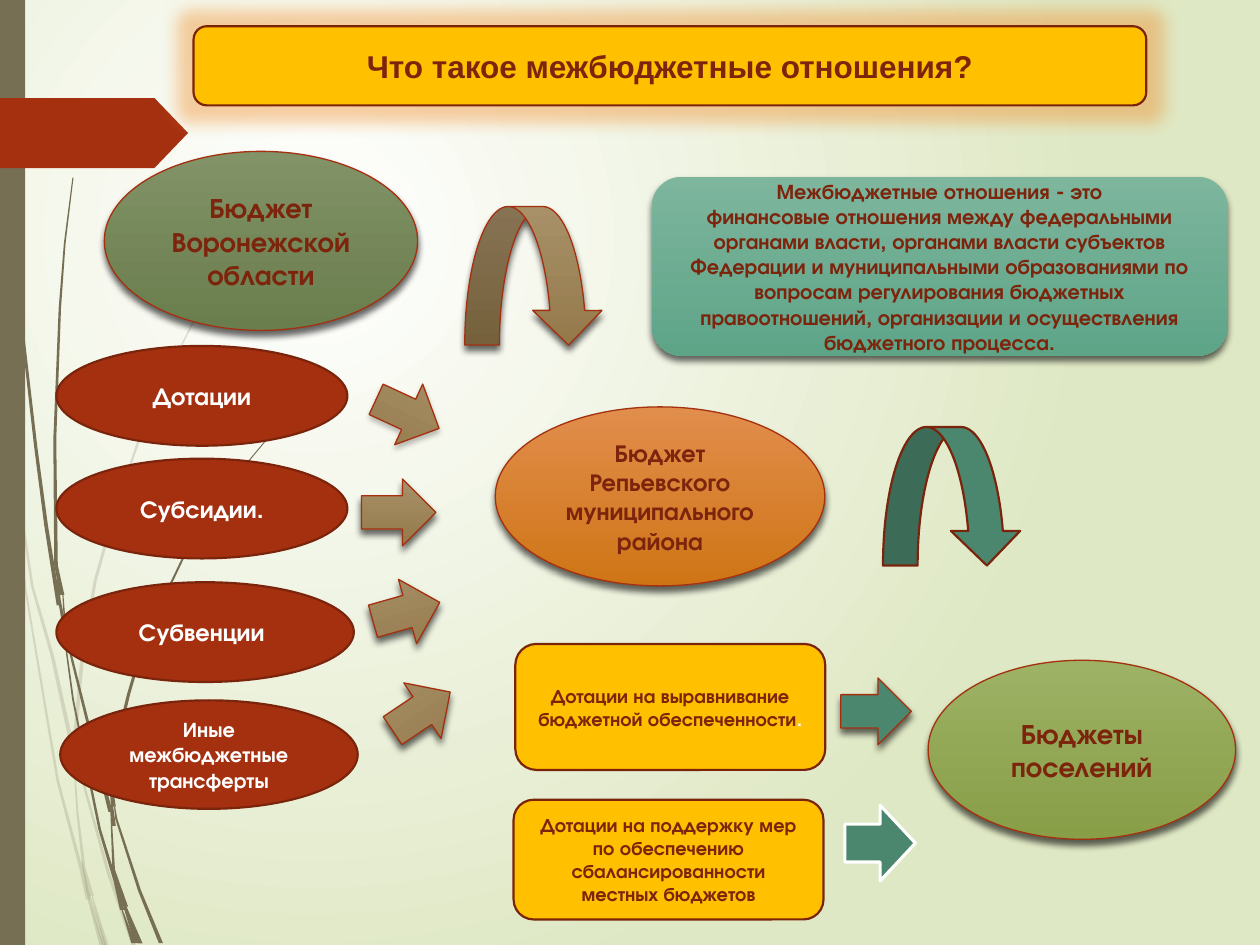
from dataclasses import dataclass
from typing import NamedTuple
from lxml import etree
from pptx import Presentation
from pptx.dml.color import RGBColor
from pptx.enum import shapes, text
from pptx.oxml import ns
from pptx.util import Pt

KIND = shapes.MSO_SHAPE


@dataclass(frozen=True)
class Theme:
    title_font: str = "Arial"
    body_font: str = "TeX Gyre Adventor"
    title: int = 18
    large: int = 16
    medium: int = 14
    small: int = 12
    tiny: int = 11
    dark: str = "7A240C"
    ink: str = "7C240C"
    white: str = "FFFFFF"
    rust: str = "A53010"
    gold: str = "FFC000"
    teal: str = "4B866E"
    stalk: str = "766F54"
    glow: str = "F08A24"
    page: tuple = ("FFFFFF", "DFE8C4")
    olive: tuple = ("819367", "6A7D4D")
    orange: tuple = ("E18D4C", "CF7516")
    green: tuple = ("9DB265", "889E47")
    mint: tuple = ("7DB59D", "5EA588")
    tan: tuple = ("A89068", "947A4B")


THEME = Theme()
PALE_STALKS = [
    [(0, 209), (2.7, 227), (5.4, 252)],
    [(7.2, 248), (8.5, 268), (18.5, 335), (30, 375), (42.2, 431)],
    [(44, 430), (45, 438), (62, 499), (76.3, 540)],
    [(52.6, 512), (60.8, 540)],
    [(5.8, 252), (14.8, 338), (33, 446), (46, 495), (50.4, 514)],
    [(42, 432), (44.3, 465), (48, 496), (52.5, 512)],
    [(156, 110), (134.5, 142), (114.5, 176), (96, 213), (79.5, 251), (66, 291),
     (54.4, 332), (47, 376), (43, 420), (43.4, 429)],
    [(50.4, 514), (58, 540)],
    [(42.8, 422), (43, 439)],
    [(46.8, 492), (50, 509), (59.5, 540)]]
DARK_STALKS = [
    [(1.8, 0), (2.5, 35), (4, 79), (10.4, 168), (20.5, 256), (26.3, 300), (33.6, 346)],
    [(36, 340), (37.5, 362), (53.5, 426), (63.2, 464)],
    [(65.5, 461), (66.5, 468), (79.8, 509), (92, 539)],
    [(34, 343), (41.8, 400), (57, 474), (66, 504), (69.8, 520)],
    [(41.7, 101.5), (37, 139), (34.2, 176), (31.3, 251), (32, 323), (35.6, 340)],
    [(72, 518), (80.3, 539)],
    [(32.4, 323), (34, 343), (38, 364)],
    [(155, 248), (137.5, 269), (121, 292), (106, 316), (93.6, 342), (81.6, 369),
     (73.4, 397), (66.5, 426), (64.2, 455), (65, 461)],
    [(69.8, 520), (76.3, 539)],
    [(63.4, 464), (65, 497), (72, 518)],
    [(63.4, 454), (65, 472)],
    [(65.5, 498), (68.5, 509), (78, 539)]]


class Box(NamedTuple):
    left: float
    top: float
    width: float
    height: float

    def inner(self, left, top, width, height):
        return Box(self.left + left, self.top + top, width, height)


def add_child(parent, tag, **attributes):
    values = {name: str(value) for name, value in attributes.items()}
    return etree.SubElement(parent, ns.qn(tag), values)


def add_effect(shape, tag, color, alpha, **attributes):
    effects = shape._element.spPr.find(ns.qn("a:effectLst"))
    node = add_child(add_child(effects, tag, **attributes), "a:srgbClr", val=color)
    add_child(node, "a:alpha", val=alpha * 1000)


def paint(fill, color):
    """Fill with one colour, or top to bottom with a pair of colours."""
    if isinstance(color, str):
        fill.solid()
        fill.fore_color.rgb = RGBColor.from_string(color)
        return
    fill.gradient()
    fill.gradient_angle = 270
    for position, (stop, shade) in enumerate(zip(fill.gradient_stops, color)):
        stop.position, stop.color.rgb = position, RGBColor.from_string(shade)


def dress(shape, fill, line=None, weight=1.25):
    shape.shadow.inherit = False
    paint(shape.fill, fill)
    shape.line.fill.background()
    if line:
        paint(shape.line.fill, line)
        shape.line.width = Pt(weight)
    return shape


def add_flat(page, kind, box, fill, line=THEME.dark, weight=1.25):
    return dress(page.shapes.add_shape(kind, *map(Pt, box)), fill, line, weight)


def add_raised(page, kind, box, fill, line=THEME.rust, shadow=(60, 4, 3)):
    shape = add_flat(page, kind, box, fill, line, 0.75)
    alpha, blur, distance = shadow
    add_effect(shape, "a:outerShdw", "000000", alpha, blurRad=Pt(blur),
               dist=Pt(distance), dir=5400000, algn="ctr", rotWithShape=0)
    return shape


def write(shape, words, size, color=THEME.ink, font=THEME.body_font):
    frame = shape.text_frame
    frame.word_wrap, frame.vertical_anchor = True, text.MSO_ANCHOR.MIDDLE
    para = frame.paragraphs[0]
    para.text, para.alignment = words, text.PP_ALIGN.CENTER
    para.font.size, para.font.bold = Pt(size), True
    add_span_style(para.runs[0], size, color, font)
    return para


def add_span_style(span, size, color, font=THEME.body_font):
    span.font.size, span.font.name, span.font.bold = Pt(size), font, True
    span.font.color.rgb = RGBColor.from_string(color)


def draw_stalk(page, box, points, alpha):
    """Grass blade that widens from its first point to its last."""
    half = [0.3 + 0.9 * index / (len(points) - 1) for index in range(len(points))]
    near, far = ([(Pt(box.left + x + side * w), Pt(box.top + y))
                  for (x, y), w in zip(points, half)] for side in (-1, 1))
    builder = page.shapes.build_freeform(*near[0], scale=1.0)
    builder.add_line_segments(near[1:] + far[::-1], close=True)
    shape = dress(builder.convert_to_shape(), THEME.stalk)
    color = shape._element.spPr.find(ns.qn("a:solidFill"))[0]
    add_child(color, "a:alpha", val=alpha * 1000)


def draw_backdrop(page, box):
    paint(page.background.fill, THEME.page)
    linear = page.element.find(".//" + ns.qn("a:lin"))
    circle = etree.Element(ns.qn("a:path"), path="circle")
    add_child(circle, "a:fillToRect", l=50000, t=50000, r=100000, b=100000)
    linear.getparent().replace(linear, circle)
    for alpha, stalks in ((20, PALE_STALKS), (100, DARK_STALKS)):
        for points in stalks:
            draw_stalk(page, box, points, alpha)
    add_flat(page, KIND.RECTANGLE, box.inner(0, 0, 14.4, box.height), THEME.stalk, None)
    tag = add_flat(page, KIND.PENTAGON, box.inner(0, 56, 107.5, 40), THEME.rust, None)
    tag.adjustments[0] = 0.48


def draw_banner(page, box):
    banner = add_flat(page, KIND.ROUNDED_RECTANGLE, box, THEME.gold)
    add_effect(banner, "a:glow", THEME.glow, 40, rad=Pt(18))
    write(banner, "Что такое межбюджетные отношения?", THEME.title, font=THEME.title_font)


def draw_definition(page, box):
    bound = chr(160).join(["финансовые", "отношения", "между"])
    write(add_raised(page, KIND.ROUNDED_RECTANGLE, box, THEME.mint, None),
          f"Межбюджетные отношения - это {bound} федеральными органами власти, органами "
          "власти субъектов Федерации и муниципальными образованиями по вопросам "
          "регулирования бюджетных правоотношений, организации и осуществления "
          "бюджетного процесса.", THEME.small)


def draw_transfers(page, box):
    ovals = [("Дотации", THEME.medium, (0, 0, 166.3, 57)),
             ("Субсидии.", THEME.medium, (0, 64.4, 166.3, 57)),
             ("Субвенции ", THEME.medium, (0, 135, 170, 57)),
             ("Иные межбюджетные трансферты", THEME.small, (2.2, 202.5, 170, 62))]
    for words, size, place in ovals:
        write(add_flat(page, KIND.OVAL, box.inner(*place), THEME.rust),
              words, size, THEME.white)
    for left, top, width, turn, shadow in [
            (180.9, 19.7, 39.6, 24.8, (25, 3, 2)), (174.4, 76, 42.5, 0, (60, 4, 3)),
            (180.2, 132.8, 39.6, 344.2, (60, 4, 3)), (188.8, 189.7, 39.6, 326.2, (60, 4, 3))]:
        place = box.inner(left, top, width, 38.2)
        add_raised(page, KIND.RIGHT_ARROW, place, THEME.tan, shadow=shadow).rotation = turn


def draw_grants(page, box):
    cards = [("Дотации на выравнивание бюджетной обеспеченности", (1, 0, 177.1, 72)),
             ("Дотации на поддержку мер по обеспечению сбалансированности "
              "местных бюджетов", (0, 89, 177.1, 68.4))]
    paras = [write(add_flat(page, KIND.ROUNDED_RECTANGLE, box.inner(*place), THEME.gold),
                   words, THEME.tiny) for words, place in cards]
    stop = paras[0].add_run()
    stop.text = "."
    add_span_style(stop, THEME.tiny, THEME.white)
    add_raised(page, KIND.RIGHT_ARROW, box.inner(187, 19.4, 40.3, 38.2), THEME.teal)
    add_flat(page, KIND.RIGHT_ARROW, box.inner(189.3, 92.2, 40.3, 43.2), THEME.teal,
             THEME.white, 1.75)


deck = Presentation()
deck.slide_width, deck.slide_height = Pt(720), Pt(540)
page = deck.slides.add_slide(deck.slide_layouts[6])
draw_backdrop(page, Box(0, 0, 720, 540))
draw_banner(page, Box(110.6, 15, 544.4, 45.2))
for words, size, fill, box in [
        ("Бюджет Воронежской области", THEME.large, THEME.olive, (59.6, 86.5, 179, 102.3)),
        ("Бюджет Репьевского муниципального района", THEME.medium, THEME.orange,
         (283, 232.5, 188.3, 102.3)),
        ("Бюджеты поселений", THEME.large, THEME.green, (530.4, 377.3, 175.7, 102.3))]:
    write(add_raised(page, KIND.OVAL, box, fill), words, size)
add_raised(page, KIND.CURVED_DOWN_ARROW, Box(265.6, 118, 79.2, 79.2), THEME.tan)
add_flat(page, KIND.CURVED_DOWN_ARROW, Box(504.6, 244, 79.2, 79.2), THEME.teal)
draw_definition(page, Box(372.5, 101, 329, 102.3))
draw_transfers(page, Box(32.2, 197.7, 229, 265))
draw_grants(page, Box(293.5, 368, 230, 158))
deck.save("out.pptx")
